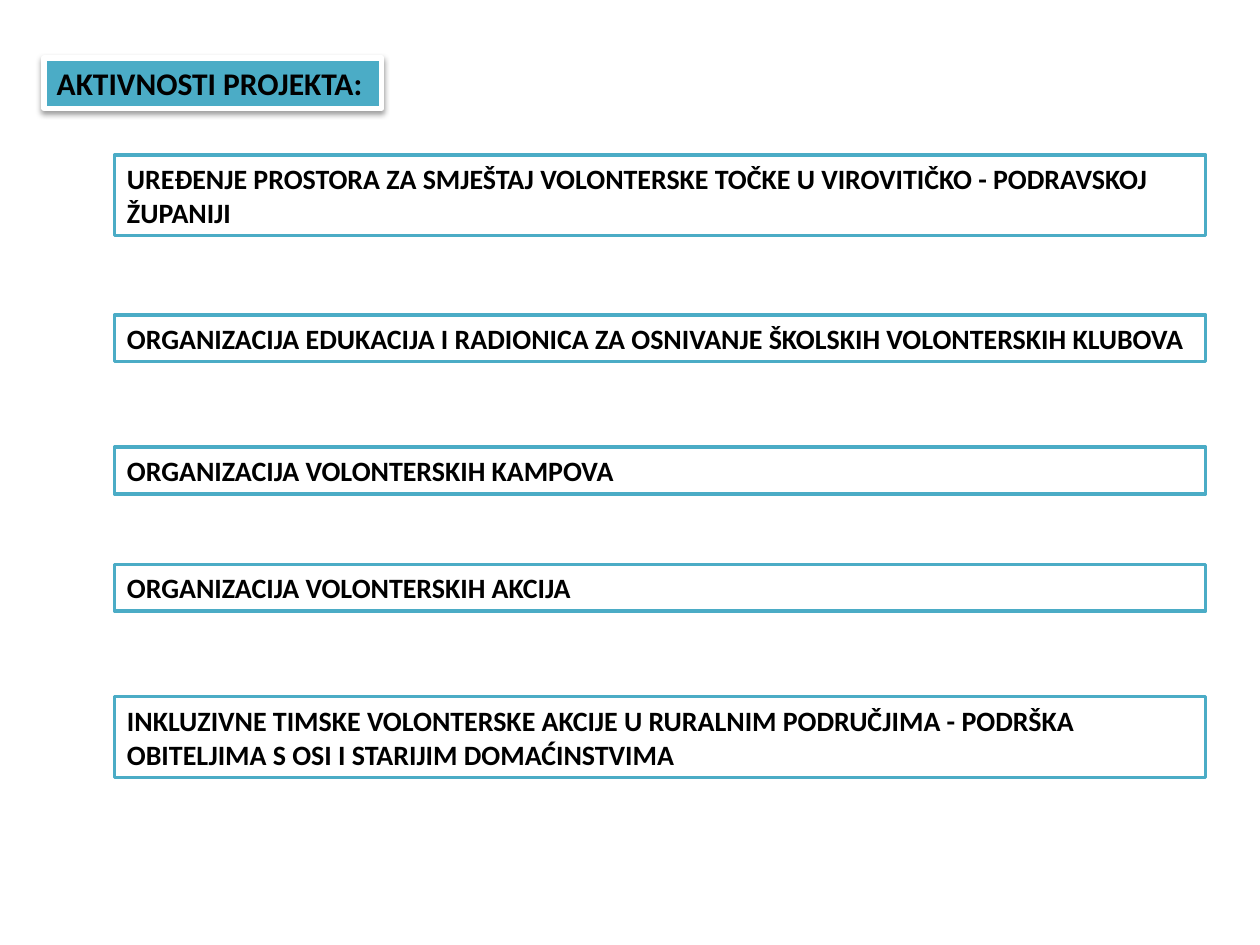
"""Build a slide that lists the project activities in outlined boxes."""
from lxml import etree
from pptx import Presentation
from pptx.dml.color import RGBColor
from pptx.enum.shapes import MSO_SHAPE
from pptx.enum.text import MSO_ANCHOR, MSO_AUTO_SIZE, PP_ALIGN
from pptx.util import Inches, Pt

RECT = MSO_SHAPE.RECTANGLE
MIDDLE = MSO_ANCHOR.MIDDLE
FIXED = MSO_AUTO_SIZE.NONE
GROW = MSO_AUTO_SIZE.SHAPE_TO_FIT_TEXT
LEFT = PP_ALIGN.LEFT
COLORS = {"teal": "4BACC6", "white": "FFFFFF", "black": "000000"}
SHADOW = """<a:effectLst xmlns:a="http://schemas.openxmlformats.org/drawingml/2006/main">
<a:outerShdw blurRad="40000" dist="20000" dir="5400000" rotWithShape="0">
<a:srgbClr val="000000"><a:alpha val="38000"/></a:srgbClr>
</a:outerShdw></a:effectLst>"""


def color(name):
    return RGBColor.from_string(COLORS[name])


def style(shape, text, size, fill, edge, width, fit):
    shape.fill.solid()
    shape.fill.fore_color.rgb = color(fill)
    shape.line.color.rgb = color(edge)
    shape.line.width = Pt(width)
    frame = shape.text_frame
    frame.word_wrap = True
    frame.auto_size = fit
    frame.vertical_anchor = MIDDLE
    para = frame.paragraphs[0]
    para.alignment = LEFT
    run = para.add_run()
    run.text = text
    run.font.name = "Calibri"
    run.font.size = Pt(size)
    run.font.bold = True
    run.font.color.rgb = color("black")


deck = Presentation()
deck.slide_width, deck.slide_height = Inches(10), Inches(7.5)
slide = deck.slides.add_slide(deck.slide_layouts[5])

title = slide.shapes.title
title.left, title.top = Inches(0.35), Inches(0.46)
title.width, title.height = Inches(2.68), Inches(0.4)
style(title, "AKTIVNOSTI PROJEKTA:", 18, "teal", "white", 3, FIXED)
title._element.spPr.append(etree.fromstring(SHADOW))

tasks = [
    (1.23, 0.64, "UREĐENJE PROSTORA ZA SMJEŠTAJ VOLONTERSKE TOČKE U VIROVITIČKO - PODRAVSKOJ ŽUPANIJI"),
    (2.5, 0.37, "ORGANIZACIJA EDUKACIJA I RADIONICA ZA OSNIVANJE ŠKOLSKIH VOLONTERSKIH KLUBOVA"),
    (3.55, 0.37, "ORGANIZACIJA VOLONTERSKIH KAMPOVA"),
    (4.48, 0.37, "ORGANIZACIJA VOLONTERSKIH AKCIJA"),
    (5.53, 0.64, "INKLUZIVNE TIMSKE VOLONTERSKE AKCIJE U RURALNIM PODRUČJIMA - PODRŠKA OBITELJIMA S OSI I STARIJIM DOMAĆINSTVIMA"),
]
for top, height, text in tasks:
    box = slide.shapes.add_shape(RECT, Inches(0.91), Inches(top), Inches(8.66), Inches(height))
    box.shadow.inherit = False
    style(box, text, 16, "white", "teal", 2, GROW)

deck.save("out.pptx")
